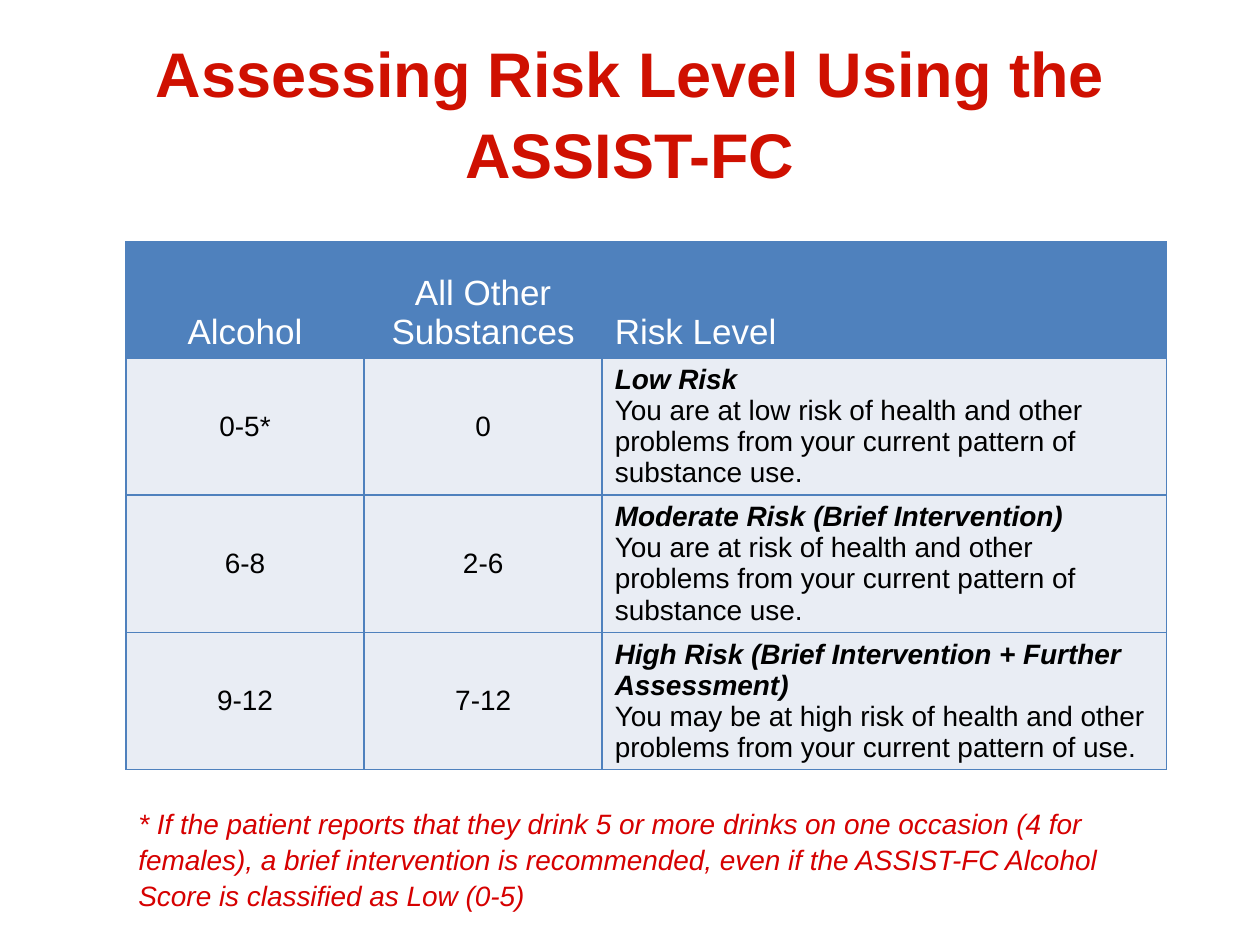
from dataclasses import dataclass

from lxml.etree import SubElement
from pptx import Presentation
from pptx.dml.color import RGBColor
from pptx.enum.text import MSO_ANCHOR, PP_ALIGN
from pptx.oxml.ns import qn
from pptx.util import Inches, Pt

WIDTH, HEIGHT = Inches(10), Inches(7.5)
LEFT, SPAN = 0.1, 0.825
COLUMN_WIDTHS = (1.89, 1.89, 4.48)
HEADER_HEIGHT, LEVEL_HEIGHT = 0.92, 1.09
BLUE, PALE, WHITE, BLACK = "4F81BD", "E9EDF4", "FFFFFF", "000000"
HEADINGS = ("Alcohol", "All Other Substances", "Risk Level")


@dataclass(frozen=True)
class RiskLevel:
    """Score ranges and advice for one level of risk."""

    alcohol: str
    others: str
    name: str
    advice: str


@dataclass(frozen=True)
class Caption:
    """Text placed by shares of the slide's size."""

    text: str
    box: tuple[float, float, float, float]
    size: int
    color: str
    bold: bool = False
    italic: bool = False
    align: PP_ALIGN = PP_ALIGN.LEFT
    anchor: MSO_ANCHOR = MSO_ANCHOR.TOP


LEVELS = (
    RiskLevel("0-5*", "0", "Low Risk",
              "You are at low risk of health and other problems from your "
              "current pattern of substance use."),
    RiskLevel("6-8", "2-6", "Moderate Risk (Brief Intervention)",
              "You are at risk of health and other problems from your "
              "current pattern of substance use."),
    RiskLevel("9-12", "7-12",
              "High Risk (Brief Intervention + Further Assessment)",
              "You may be at high risk of health and other problems from "
              "your current pattern of use."),
)
CAPTIONS = (
    Caption("Assessing Risk Level Using the ASSIST-FC",
            (0.05, 1 / 30, 0.9, 1 / 6), 36, "CF1001", bold=True,
            align=PP_ALIGN.CENTER, anchor=MSO_ANCHOR.MIDDLE),
    Caption("* If the patient reports that they drink 5 or more drinks on one "
            "occasion (4 for females), a brief intervention is recommended, "
            "even if the ASSIST-FC Alcohol Score is classified as Low (0-5)",
            (LEFT, 0.845, SPAN, 0.16), 16, "D60000", italic=True),
)


def rgb(color: str) -> RGBColor:
    """Turn a hex string into a colour."""
    return RGBColor.from_string(color)


def set_font(font, size: int, color: str) -> None:
    """Apply the slide's typeface with a size and colour."""
    font.name, font.size = "Arial", Pt(size)
    font.color.rgb = rgb(color)


def draw_caption(slide, caption: Caption) -> None:
    """Draw one caption."""
    left, top, width, height = caption.box
    frame = slide.shapes.add_textbox(
        int(left * WIDTH), int(top * HEIGHT),
        int(width * WIDTH), int(height * HEIGHT)).text_frame
    frame.word_wrap = True
    frame.vertical_anchor = caption.anchor
    paragraph = frame.paragraphs[0]
    paragraph.text = caption.text
    paragraph.alignment = caption.align
    paragraph.line_spacing = 1.07
    set_font(paragraph.font, caption.size, caption.color)
    paragraph.font.bold = caption.bold
    paragraph.font.italic = caption.italic


def style_cell(cell, column: int, is_header: bool) -> None:
    """Set the borders, fill, anchor and font of a cell."""
    properties = cell._tc.get_or_add_tcPr()
    for side in ("lnL", "lnR", "lnT", "lnB"):
        border = SubElement(properties, qn(f"a:{side}"), w=str(Pt(1)))
        fill = SubElement(border, qn("a:solidFill"))
        SubElement(fill, qn("a:srgbClr"), val=BLUE)
    cell.fill.solid()
    cell.fill.fore_color.rgb = rgb(BLUE if is_header else PALE)
    cell.vertical_anchor = MSO_ANCHOR.BOTTOM if is_header else MSO_ANCHOR.MIDDLE
    paragraph = cell.text_frame.paragraphs[0]
    paragraph.alignment = PP_ALIGN.CENTER if column < 2 else PP_ALIGN.LEFT
    set_font(paragraph.font, 20 if is_header else 16,
             WHITE if is_header else BLACK)
    paragraph.font.bold = False


def write_advice(cell, level: RiskLevel) -> None:
    """Write the level's name in bold italics above its advice."""
    paragraph = cell.text_frame.paragraphs[0]
    name = paragraph.add_run()
    name.text = level.name
    name.font.bold = name.font.italic = True
    paragraph.add_line_break()
    paragraph.add_run().text = level.advice


def draw_risk_table(slide) -> None:
    """Draw the table of score ranges and risk levels."""
    heights = (HEADER_HEIGHT,) + (LEVEL_HEIGHT,) * len(LEVELS)
    table = slide.shapes.add_table(
        len(heights), len(HEADINGS), int(LEFT * WIDTH), int(0.256 * HEIGHT),
        int(SPAN * WIDTH), Inches(sum(heights))).table
    for column, width in zip(table.columns, COLUMN_WIDTHS):
        column.width = Inches(width)
    for row, height in zip(table.rows, heights):
        row.height = Inches(height)
    for column, heading in enumerate(HEADINGS):
        table.cell(0, column).text = heading
    for row, level in enumerate(LEVELS, start=1):
        table.cell(row, 0).text = level.alcohol
        table.cell(row, 1).text = level.others
        write_advice(table.cell(row, 2), level)
    for row in range(len(heights)):
        for column in range(len(HEADINGS)):
            style_cell(table.cell(row, column), column, row == 0)


def main() -> None:
    """Build and save the slide."""
    presentation = Presentation()
    presentation.slide_width, presentation.slide_height = WIDTH, HEIGHT
    slide = presentation.slides.add_slide(presentation.slide_layouts[6])
    draw_risk_table(slide)
    for caption in CAPTIONS:
        draw_caption(slide, caption)
    presentation.save("out.pptx")


if __name__ == "__main__":
    main()
